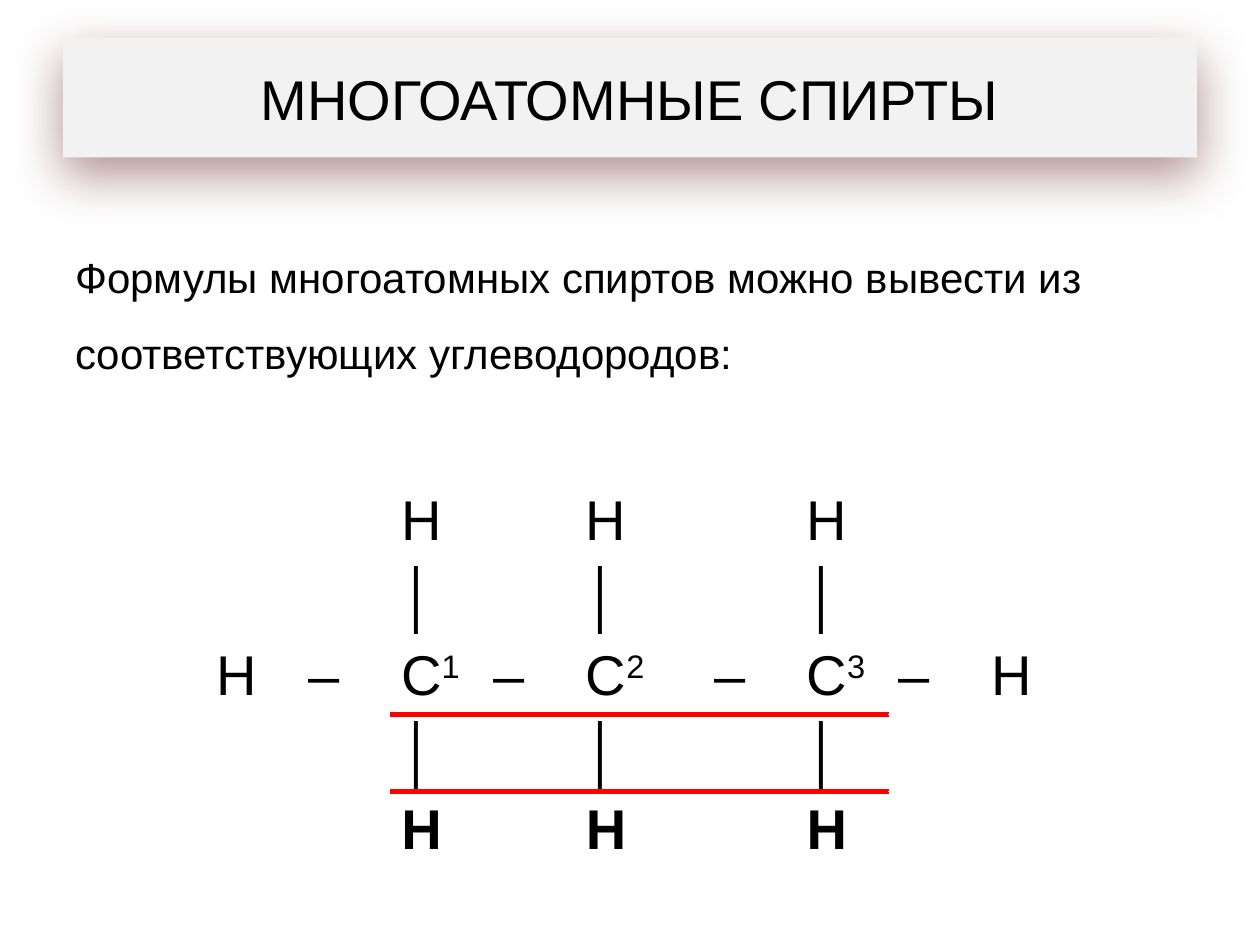
from dataclasses import dataclass

from lxml import etree
from pptx import Presentation
from pptx.dml.color import RGBColor
from pptx.enum.text import MSO_ANCHOR, PP_ALIGN
from pptx.oxml.ns import qn
from pptx.util import Inches, Pt

MIDDLE = MSO_ANCHOR.MIDDLE
CENTER = PP_ALIGN.CENTER
TITLE_ONLY = 5


@dataclass(frozen=True)
class Theme:
    font: str = "Arial"
    text: str = "000000"
    banner: str = "F2F2F2"
    shadow: str = "632523"
    chain: str = "FF0000"
    title_size: int = 32
    body_size: int = 24
    formula_size: int = 32


@dataclass(frozen=True)
class Atom:
    row: int
    col: int
    symbol: str
    number: str = ""
    bold: bool = False


THEME = Theme()
CARBON_ROW = 2
CARBON_COLS = (2, 4, 6)
ROWS, COLS = 5, 9
WIDE_COL, WIDE_WIDTH = 4, 1.02
TABLE_WIDTH, ROW_HEIGHT = 6.88, 0.6
CHAIN_COLS = range(CARBON_COLS[0], CARBON_COLS[-1] + 1)


def add_run(paragraph, text: str, size: int, bold: bool = False):
    run = paragraph.add_run()
    run.text = text
    run.font.name = THEME.font
    run.font.size = Pt(size)
    run.font.bold = bold
    run.font.color.rgb = RGBColor.from_string(THEME.text)
    return run


def add_color(parent, value: str):
    fill = etree.SubElement(parent, qn("a:srgbClr"), val=value)
    return fill


def add_banner_shadow(shape) -> None:
    effects = etree.SubElement(shape._element.spPr, qn("a:effectLst"))
    shadow = etree.SubElement(
        effects, qn("a:outerShdw"), blurRad=str(Pt(30)), dist=str(Pt(10)),
        dir=str(90 * 60000), algn="ctr", rotWithShape="0")
    color = add_color(shadow, THEME.shadow)
    etree.SubElement(color, qn("a:alpha"), val="50000")


def add_border(cell, side: str) -> None:
    """Draw the carbon chain line on one side of a cell, "lnT" or "lnB"."""
    line = etree.Element(qn(f"a:{side}"), w=str(Pt(3)))
    add_color(etree.SubElement(line, qn("a:solidFill")), THEME.chain)
    cell._tc.get_or_add_tcPr().insert(0, line)


def add_title(slide, text: str) -> None:
    title = slide.shapes.title
    title.left, title.top = Inches(0.5), Inches(0.3)
    title.width, title.height = Inches(9), Inches(0.95)
    title.fill.solid()
    title.fill.fore_color.rgb = RGBColor.from_string(THEME.banner)
    add_banner_shadow(title)
    title.text_frame.vertical_anchor = MIDDLE
    paragraph = title.text_frame.paragraphs[0]
    paragraph.alignment = CENTER
    add_run(paragraph, text, THEME.title_size)


def add_statement(slide, text: str) -> None:
    statement = slide.shapes.add_textbox(
        Inches(0.5), Inches(1.75), Inches(9), Inches(2.08))
    statement.text_frame.word_wrap = True
    paragraph = statement.text_frame.paragraphs[0]
    paragraph.line_spacing = 1.5
    paragraph.space_before = Pt(3)
    add_run(paragraph, text, THEME.body_size)


def propane_atoms() -> list[Atom]:
    atoms = [Atom(CARBON_ROW, col, "H") for col in (0, COLS - 1)]
    atoms += [Atom(CARBON_ROW, col, "–") for col in range(1, COLS, 2)]
    for number, col in enumerate(CARBON_COLS, start=1):
        atoms += [
            Atom(0, col, "H"),
            Atom(1, col, "│"),
            Atom(CARBON_ROW, col, "C", str(number)),
            Atom(3, col, "│"),
            Atom(4, col, "H", bold=True),
        ]
    return atoms


def add_formula(slide, atoms: list[Atom]) -> None:
    formula = slide.shapes.add_table(
        ROWS, COLS, Inches(1.64), Inches(3.83),
        Inches(TABLE_WIDTH), Inches(ROWS * ROW_HEIGHT)).table
    formula.first_row = formula.horz_banding = False
    for row in formula.rows:
        row.height = Inches(ROW_HEIGHT)
    narrow_width = (TABLE_WIDTH - WIDE_WIDTH) / (COLS - 1)
    for index, column in enumerate(formula.columns):
        column.width = Inches(WIDE_WIDTH if index == WIDE_COL else narrow_width)

    for cell in formula.iter_cells():
        cell.fill.background()
        cell.vertical_anchor = MIDDLE
        cell.margin_left = cell.margin_right = Inches(0.08)
        cell.margin_top = cell.margin_bottom = Inches(0.04)
    for col in CHAIN_COLS:
        add_border(formula.cell(CARBON_ROW, col), "lnB")
        add_border(formula.cell(CARBON_ROW + 1, col), "lnT")

    for atom in atoms:
        paragraph = formula.cell(atom.row, atom.col).text_frame.paragraphs[0]
        add_run(paragraph, atom.symbol, THEME.formula_size, atom.bold)
        if atom.number:
            number = add_run(paragraph, atom.number, THEME.formula_size)
            number.font._element.set("baseline", "30000")


def main() -> None:
    presentation = Presentation()
    presentation.slide_width, presentation.slide_height = Inches(10), Inches(7.5)
    slide = presentation.slides.add_slide(presentation.slide_layouts[TITLE_ONLY])
    add_title(slide, "МНОГОАТОМНЫЕ СПИРТЫ")
    add_statement(slide, "Формулы многоатомных спиртов можно вывести из "
                         "соответствующих углеводородов:")
    add_formula(slide, propane_atoms())
    presentation.save("out.pptx")


if __name__ == "__main__":
    main()
